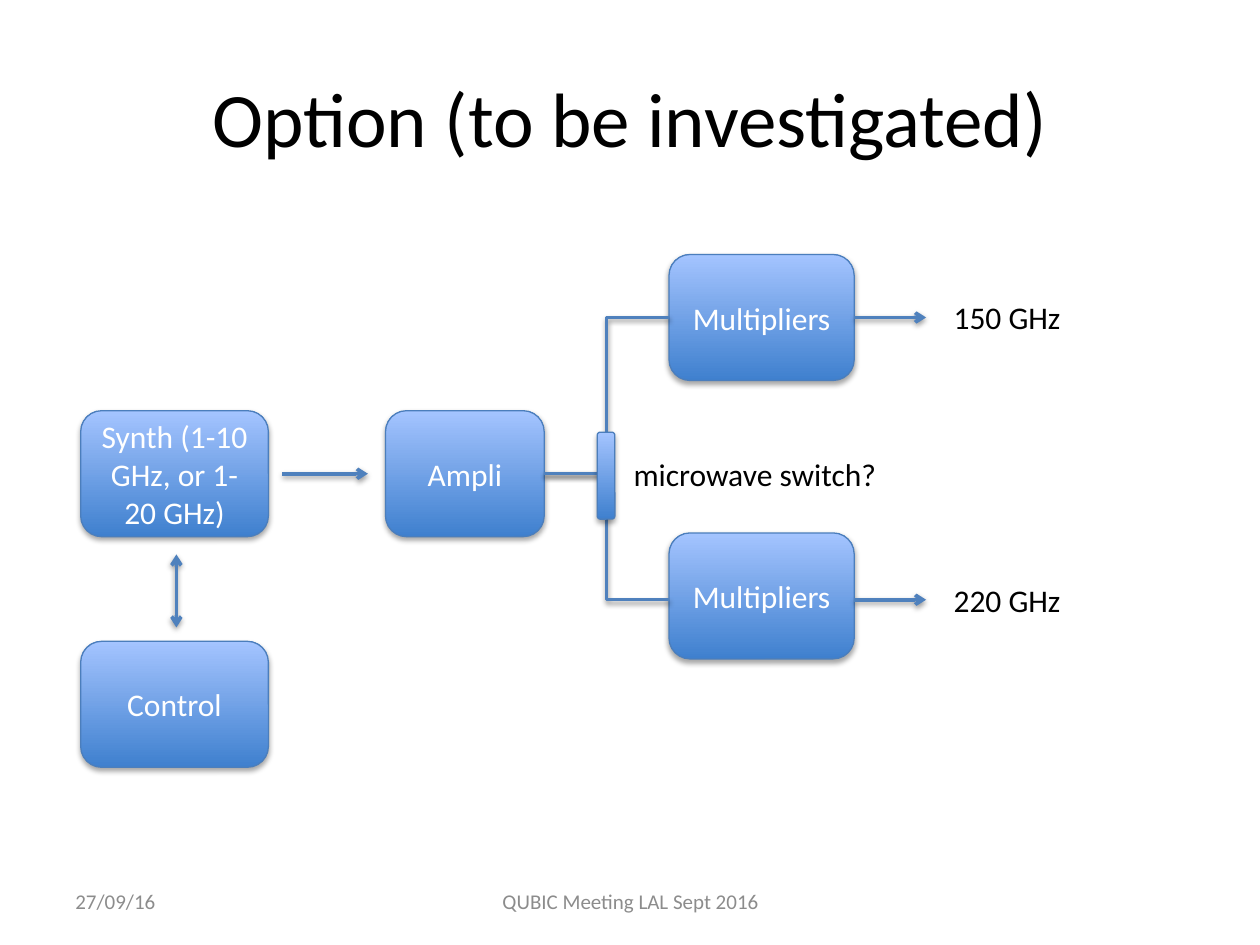
from dataclasses import dataclass

from lxml.etree import SubElement
from pptx import Presentation
from pptx.dml.color import RGBColor
from pptx.enum.shapes import MSO_CONNECTOR, MSO_SHAPE
from pptx.enum.text import MSO_ANCHOR, MSO_AUTO_SIZE, PP_ALIGN
from pptx.oxml.ns import qn
from pptx.slide import Slide
from pptx.text.text import TextFrame
from pptx.util import Inches, Pt


@dataclass(frozen=True)
class Theme:
    font: str = "Calibri"
    ink: str = "000000"
    muted: str = "8C8C8C"
    box_text: str = "FFFFFF"
    box_bottom: str = "3F80CE"
    box_top: str = "A4C4FF"
    box_line: str = "4B7EBC"
    wire: str = "4F81BD"
    title_size: float = 44
    body_size: float = 18
    footer_size: float = 12
    box_line_width: float = 0.75
    wire_width: float = 2


@dataclass(frozen=True)
class Box:
    left: float
    top: float
    width: float
    height: float = 1
    text: str = ""

    @property
    def right(self) -> float:
        return self.left + self.width

    @property
    def middle(self) -> float:
        return self.top + self.height / 2


@dataclass(frozen=True)
class Wire:
    start: tuple[float, float]
    end: tuple[float, float]
    bent: bool = False
    head: bool = False
    tail: bool = False


THEME = Theme()
SYNTH = Box(0.64, 3.26, 1.49, text="Synth (1-10 GHz, or 1-20 GHz)")
AMPLI = Box(3.06, 3.26, 1.26, text="Ampli")
CONTROL = Box(0.64, 5.09, 1.49, text="Control")
MULTIPLIER_150 = Box(5.31, 2.02, 1.47, text="Multipliers")
MULTIPLIER_220 = Box(5.31, 4.23, 1.47, text="Multipliers")
SWITCH = Box(4.74, 3.43, 0.14, 0.69)
CHANNELS = {"150 GHz": MULTIPLIER_150, "220 GHz": MULTIPLIER_220}
OUTPUT_LENGTH = 0.57
LABEL_HEIGHT = 0.4


def write(frame: TextFrame, text: str, size: float, color: str,
          align: PP_ALIGN = PP_ALIGN.LEFT) -> None:
    paragraph = frame.paragraphs[0]
    paragraph.alignment = align
    run = paragraph.add_run()
    run.text = text
    run.font.name = THEME.font
    run.font.size = Pt(size)
    run.font.color.rgb = RGBColor.from_string(color)


def add_shadow(properties, opacity: int, distance: float) -> None:
    """Append a soft downward shadow; opacity in percent, distance in points."""
    effects = SubElement(properties, qn("a:effectLst"))
    shadow = SubElement(effects, qn("a:outerShdw"), blurRad=str(Pt(3.1)),
                        dist=str(Pt(distance)), dir="5400000", rotWithShape="0")
    color = SubElement(shadow, qn("a:srgbClr"), val="000000")
    SubElement(color, qn("a:alpha"), val=str(opacity * 1000))


def add_box(slide: Slide, box: Box) -> None:
    shape = slide.shapes.add_shape(
        MSO_SHAPE.ROUNDED_RECTANGLE, Inches(box.left), Inches(box.top),
        Inches(box.width), Inches(box.height))
    shape.fill.gradient()
    shape.fill.gradient_angle = 90
    for stop, color in zip(shape.fill.gradient_stops,
                           (THEME.box_bottom, THEME.box_top)):
        stop.color.rgb = RGBColor.from_string(color)
    shape.line.color.rgb = RGBColor.from_string(THEME.box_line)
    shape.line.width = Pt(THEME.box_line_width)
    add_shadow(shape._element.spPr, 35, 1.8)
    if box.text:
        shape.text_frame.vertical_anchor = MSO_ANCHOR.MIDDLE
        write(shape.text_frame, box.text, THEME.body_size, THEME.box_text,
              PP_ALIGN.CENTER)


def add_wire(slide: Slide, wire: Wire) -> None:
    kind = MSO_CONNECTOR.ELBOW if wire.bent else MSO_CONNECTOR.STRAIGHT
    connector = slide.shapes.add_connector(
        kind, *(Inches(value) for value in wire.start + wire.end))
    connector.line.color.rgb = RGBColor.from_string(THEME.wire)
    connector.line.width = Pt(THEME.wire_width)
    properties = connector._element.spPr
    outline = properties.find(qn("a:ln"))
    for shown, tag in ((wire.head, "a:headEnd"), (wire.tail, "a:tailEnd")):
        if shown:
            SubElement(outline, qn(tag), type="arrow")
    add_shadow(properties, 38, 1.6)


def add_text(slide: Slide, area: Box) -> TextFrame:
    """Add an empty text box over the area; the caller writes its text."""
    return slide.shapes.add_textbox(
        Inches(area.left), Inches(area.top),
        Inches(area.width), Inches(area.height)).text_frame


def add_label(slide: Slide, label: Box) -> None:
    frame = add_text(slide, label)
    frame.word_wrap = False
    frame.auto_size = MSO_AUTO_SIZE.SHAPE_TO_FIT_TEXT
    write(frame, label.text, THEME.body_size, THEME.ink)


def add_footer(slide: Slide, footer: Box, align: PP_ALIGN) -> None:
    frame = add_text(slide, footer)
    frame.word_wrap = True
    frame.vertical_anchor = MSO_ANCHOR.MIDDLE
    write(frame, footer.text, THEME.footer_size, THEME.muted, align)


def add_title(slide: Slide, text: str) -> None:
    title = slide.shapes.title
    title.left, title.top = Inches(0.5), Inches(0.3)
    title.width, title.height = Inches(9), Inches(1.25)
    title.text_frame.vertical_anchor = MSO_ANCHOR.MIDDLE
    write(title.text_frame, text, THEME.title_size, THEME.ink, PP_ALIGN.CENTER)


def main() -> None:
    presentation = Presentation()
    presentation.slide_width = Inches(10)
    presentation.slide_height = Inches(7.5)
    slide = presentation.slides.add_slide(presentation.slide_layouts[5])

    add_title(slide, "Option (to be investigated)")
    add_footer(slide, Box(0.5, 6.95, 2.33, 0.4, "27/09/16"), PP_ALIGN.LEFT)
    add_footer(slide, Box(3.42, 6.95, 3.17, 0.4, "QUBIC Meeting LAL Sept 2016"),
               PP_ALIGN.CENTER)

    for box in (SYNTH, AMPLI, CONTROL, *CHANNELS.values()):
        add_box(slide, box)

    add_wire(slide, Wire((1.4, 4.4), (1.4, 4.98), head=True, tail=True))
    add_wire(slide, Wire((2.24, AMPLI.middle), (2.92, AMPLI.middle), tail=True))
    for frequency, multiplier in CHANNELS.items():
        level = multiplier.middle + (0.03 if multiplier is MULTIPLIER_220 else 0)
        output_end = multiplier.right + OUTPUT_LENGTH
        add_wire(slide, Wire((AMPLI.right, AMPLI.middle),
                             (multiplier.left, level), bent=True))
        add_wire(slide, Wire((multiplier.right, level), (output_end, level),
                             tail=True))
        add_label(slide, Box(output_end + 0.12, level - LABEL_HEIGHT / 2,
                             1.06, LABEL_HEIGHT, frequency))

    add_box(slide, SWITCH)
    add_label(slide, Box(4.93, AMPLI.middle - LABEL_HEIGHT / 2, 2.17,
                         LABEL_HEIGHT, "microwave switch?"))
    presentation.save("out.pptx")


if __name__ == "__main__":
    main()
